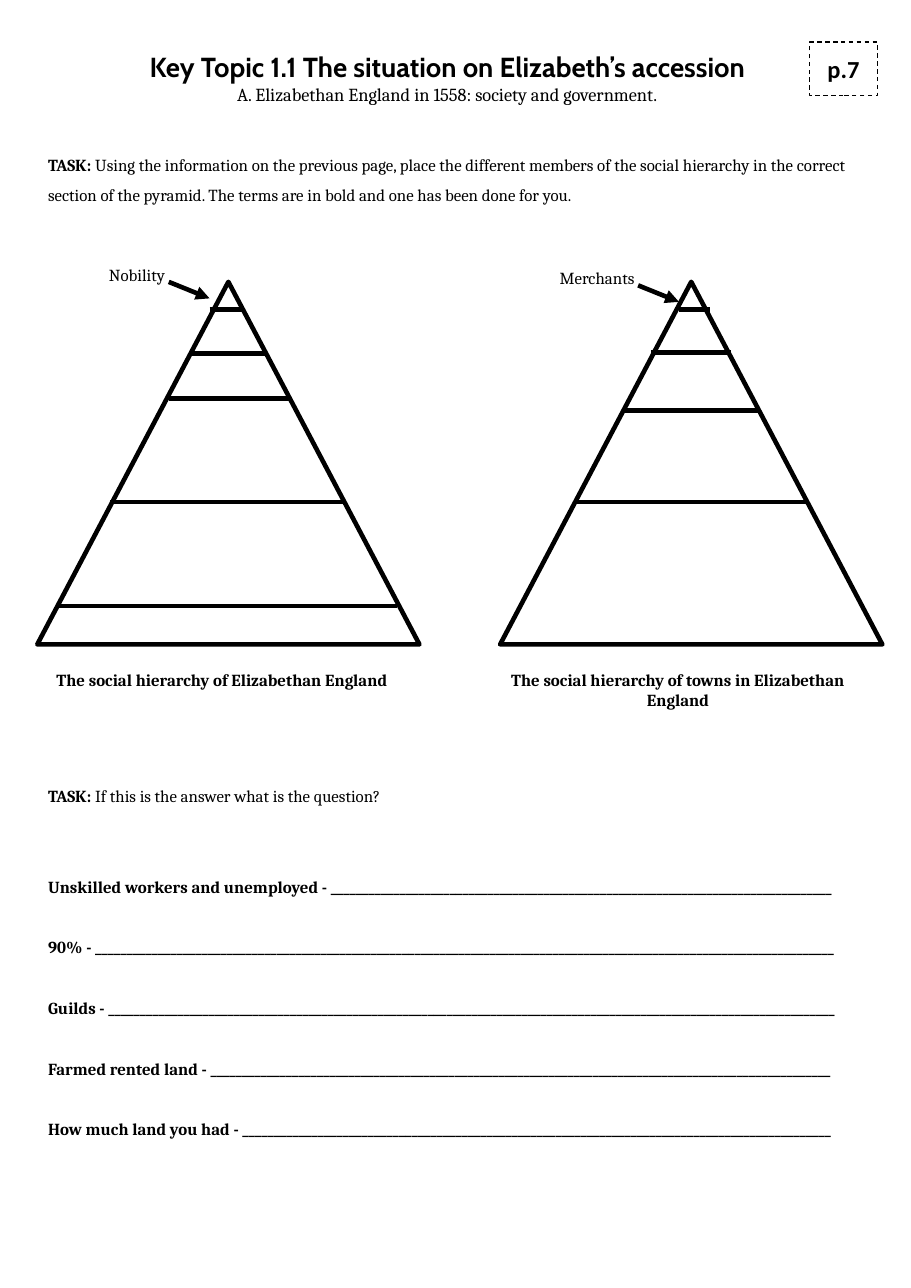
from pptx import Presentation
from pptx.dml.color import RGBColor
from pptx.enum.dml import MSO_LINE
from pptx.enum.shapes import MSO_CONNECTOR, MSO_SHAPE
from pptx.enum.text import MSO_ANCHOR, PP_ALIGN as Align
from pptx.oxml.ns import qn
from pptx.util import Cm, Pt
from lxml.etree import SubElement

BLACK = RGBColor(0, 0, 0)
WHITE = RGBColor(255, 255, 255)
SERIF = "Cambria"

deck = Presentation()
deck.slide_width, deck.slide_height = Cm(21), Cm(29.7)
slide = deck.slides.add_slide(deck.slide_layouts[6])
shapes = slide.shapes


def add_text(box, lines, align=Align.LEFT, face=SERIF, size=11, bold=False):
    """Make a wrapping text box with one paragraph per line."""
    frame = shapes.add_textbox(*map(Cm, box)).text_frame
    frame.word_wrap = True
    for i, line in enumerate(lines):
        para = frame.add_paragraph() if i else frame.paragraphs[0]
        para.text, para.alignment = line, align
        font = para.font
        font.name, font.size, font.bold = face, Pt(size), bold
        font.color.rgb = BLACK
    return frame


def add_line(x1, y1, x2, y2):
    line = shapes.add_connector(
        MSO_CONNECTOR.STRAIGHT, Cm(x1), Cm(y1), Cm(x2), Cm(y2))
    line.line.color.rgb, line.line.width = BLACK, Pt(3)
    props = line.element.spPr
    SubElement(props, qn("a:effectLst"))
    return props.find(qn("a:ln"))


# Heading and page number
title = add_text(
    (1.96, 0.94, 16.71, 1.7),
    ["Key Topic 1.1 The situation on Elizabeth’s accession",
     "A. Elizabethan England in 1558: society and government."],
    Align.CENTER, size=12)
title.vertical_anchor = MSO_ANCHOR.MIDDLE
title.margin_top = title.margin_bottom = Cm(0.25)
head = title.paragraphs[0].font
head.name, head.size, head.bold = "Cabin", Pt(18), True

page = shapes.add_shape(
    MSO_SHAPE.RECTANGLE, Cm(18.67), Cm(0.97), Cm(1.55), Cm(1.24))
page.shadow.inherit = False
page.fill.solid()
page.fill.fore_color.rgb = WHITE
page.line.color.rgb, page.line.width = BLACK, Pt(0.75)
page.line.dash_style = MSO_LINE.DASH
page.text_frame.vertical_anchor = MSO_ANCHOR.MIDDLE
para = page.text_frame.paragraphs[0]
para.text, para.alignment = "p.7", Align.CENTER
para.font.name, para.font.size, para.font.bold = "Calibri", Pt(16), True
para.font.color.rgb = BLACK

# Pyramids: left edge, bars (y, x1, x2), arrow start,
# label, label box, label alignment, caption, caption box
pyramids = [
    (0.86,
     [(7.14, 4.83, 5.59), (8.15, 4.42, 6.12), (9.19, 3.89, 6.71),
      (11.58, 2.54, 7.95), (13.97, 1.3, 9.14)],
     (3.89, 6.5),
     "Nobility", (2.26, 5.99, 2.08, 0.74), Align.LEFT,
     "The social hierarchy of Elizabethan England",
     (0.56, 15.32, 9.12, 0.74)),
    (11.53,
     [(7.14, 15.65, 16.36), (8.13, 15.01, 16.84), (9.47, 14.38, 17.53),
      (11.58, 13.23, 18.64)],
     (14.71, 6.58),
     "Merchants", (12.37, 6.05, 2.79, 0.74), Align.CENTER,
     "The social hierarchy of towns in Elizabethan England",
     (11.07, 15.32, 9.12, 1.19)),
]
for left, bars, (x, y), label, spot, align, caption, place in pyramids:
    shape = shapes.add_shape(
        MSO_SHAPE.ISOSCELES_TRIANGLE, Cm(left), Cm(6.5), Cm(8.81), Cm(8.36))
    shape.shadow.inherit = False
    shape.fill.solid()
    shape.fill.fore_color.rgb = WHITE
    shape.line.color.rgb, shape.line.width = BLACK, Pt(3)
    for level, start, end in bars:
        add_line(start, level, end, level)
    arrow = add_line(x, y, x + 0.94, y + 0.38)
    SubElement(arrow, qn("a:tailEnd"), type="triangle")
    add_text(spot, [label], align)
    add_text(place, [caption], Align.CENTER, bold=True)

# Tasks, with blanks of the given number of underscores
blanks = [("Unskilled workers and unemployed", 80), ("90%", 118),
          ("Guilds", 116), ("Farmed rented land", 99),
          ("How much land you had", 94)]
tasks = [
    ((0.86, 3.2, 19.35, 1.6),
     "Using the information on the previous page, place the different "
     "members of the social hierarchy in the correct section of the pyramid. "
     "The terms are in bold and one has been done for you.", []),
    ((0.86, 17.75, 18.87, 10.03),
     "If this is the answer what is the question?", blanks),
]
for box, task, rows in tasks:
    lines = [f"{answer} - {'_' * count}" for answer, count in rows]
    frame = add_text(box, ["TASK: "] + lines, bold=True)
    frame.paragraphs[0].add_run().text = task
    frame.paragraphs[0].runs[1].font.bold = False
    for i, para in enumerate(frame.paragraphs):
        para.line_spacing = 1.5
        if i:
            para.space_before = Pt(39.7 if i == 1 else 19.85)

deck.save("out.pptx")
